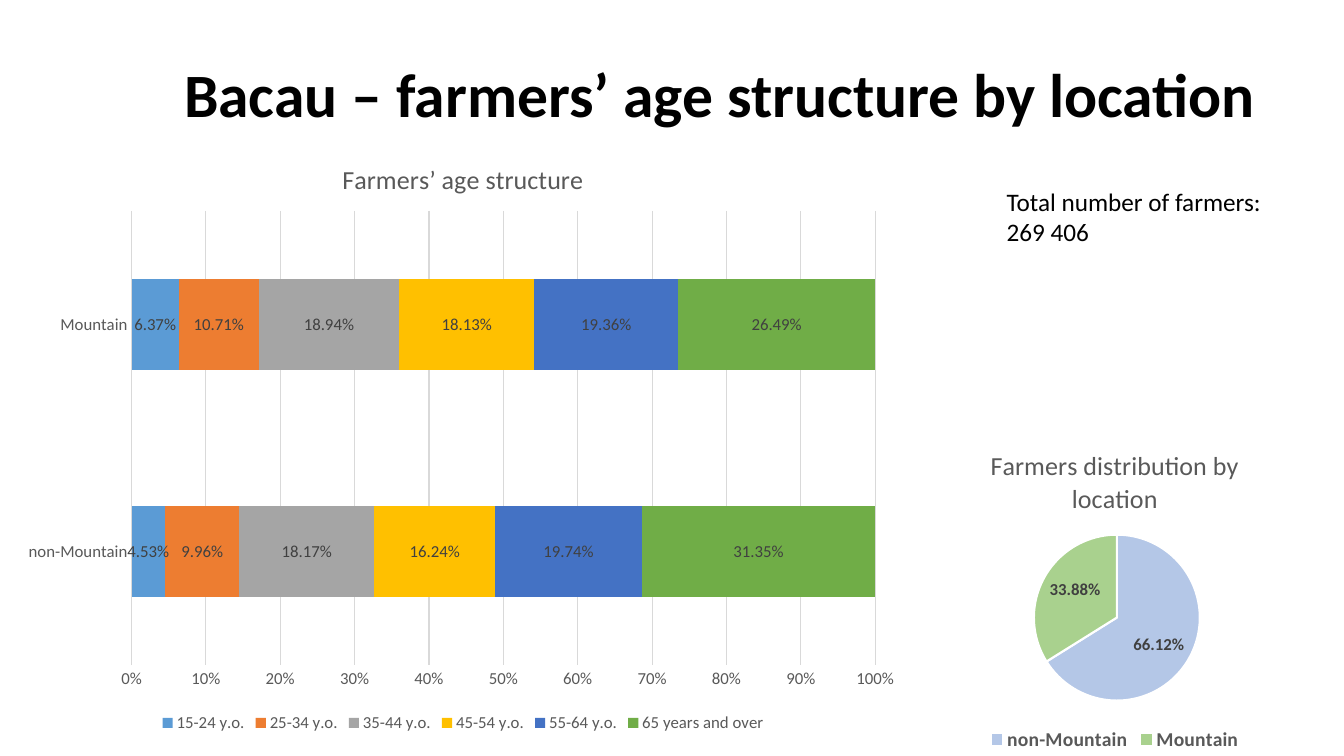
from lxml.etree import SubElement
from pptx import Presentation
from pptx.chart.data import CategoryChartData
from pptx.dml.color import RGBColor
from pptx.enum.chart import XL_CHART_TYPE, XL_LABEL_POSITION, XL_LEGEND_POSITION, XL_TICK_MARK
from pptx.enum.text import MSO_ANCHOR
from pptx.oxml.ns import qn
from pptx.util import Cm, Pt

FONT = "Calibri"
LOCATIONS = ["non-Mountain", "Mountain"]
AGE_GROUPS = [
    ("15-24 y.o.", "5B9BD5", (0.0453, 0.0637)),
    ("25-34 y.o.", "ED7D31", (0.0996, 0.1071)),
    ("35-44 y.o.", "A5A5A5", (0.1817, 0.1894)),
    ("45-54 y.o.", "FFC000", (0.1624, 0.1813)),
    ("55-64 y.o.", "4472C4", (0.1974, 0.1936)),
    ("65 years and over", "70AD47", (0.3135, 0.2649)),
]
LOCATION_SHARES = (66.12, 33.88)
LOCATION_COLORS = ("B4C7E7", "A9D18E")
GRAY = "595959"
LABEL_GRAY = "404040"
GRID_GRAY = "D9D9D9"


def color(value):
    return RGBColor.from_string(value)


def style_font(font, size, value, bold=False):
    font.name = FONT
    font.size = Pt(size)
    font.bold = bold
    font.color.rgb = color(value)


def fill_shape(item, value):
    item.format.fill.solid()
    item.format.fill.fore_color.rgb = color(value)


def style_line(line, value, width):
    line.color.rgb = color(value)
    line.width = Pt(width)


def add_text(slide, text, left, top, width, height, size,
             bold=False, anchor=MSO_ANCHOR.TOP, spacing=1.0):
    shape = slide.shapes.add_textbox(Cm(left), Cm(top), Cm(width), Cm(height))
    frame = shape.text_frame
    frame.word_wrap = True
    frame.vertical_anchor = anchor
    frame.text = text
    for paragraph in frame.paragraphs:
        paragraph.line_spacing = spacing
        style_font(paragraph.runs[0].font, size, "000000", bold)


def set_plot_layout(chart, **fractions):
    plot_area = chart.element.find(".//" + qn("c:plotArea"))
    for layout in plot_area.findall(qn("c:layout")):
        plot_area.remove(layout)
    layout = SubElement(plot_area, qn("c:layout"))
    plot_area.insert(0, layout)
    manual = SubElement(layout, qn("c:manualLayout"))
    settings = {"layoutTarget": "inner", "xMode": "edge", "yMode": "edge", **fractions}
    for name, value in settings.items():
        SubElement(manual, qn(f"c:{name}")).set("val", str(value))


def add_chart(slide, kind, series, left, top, width, height, title, legend_size, legend_bold=False):
    data = CategoryChartData()
    data.categories = LOCATIONS
    for name, values in series:
        data.add_series(name, values)
    frame = slide.shapes.add_chart(kind, Cm(left), Cm(top), Cm(width), Cm(height), data)
    chart = frame.chart
    style_font(chart.font, 10, "000000")
    chart.has_title = True
    chart.chart_title.text_frame.text = title
    run = chart.chart_title.text_frame.paragraphs[0].runs[0]
    style_font(run.font, 18.6, GRAY)
    chart.has_legend = True
    chart.legend.position = XL_LEGEND_POSITION.BOTTOM
    chart.legend.include_in_layout = False
    style_font(chart.legend.font, legend_size, GRAY, legend_bold)
    return chart


def style_labels(labels, position, bold=False):
    labels.number_format = "0.00%"
    labels.number_format_is_linked = False
    labels.position = position
    style_font(labels.font, 12, LABEL_GRAY, bold)


def style_axis(axis):
    axis.major_tick_mark = XL_TICK_MARK.NONE
    axis.minor_tick_mark = XL_TICK_MARK.NONE
    style_font(axis.tick_labels.font, 12, GRAY)


def add_age_chart(slide):
    chart = add_chart(slide, XL_CHART_TYPE.BAR_STACKED_100,
                      [(name, values) for name, _, values in AGE_GROUPS],
                      0.38, 3.51, 22.58, 15.06, "Farmers’ age structure", 12)
    set_plot_layout(chart, x=0.13, y=0.12, w=0.83, h=0.76)
    plot = chart.plots[0]
    plot.gap_width = 150
    plot.overlap = 100
    for series, (_, value, _) in zip(plot.series, AGE_GROUPS):
        fill_shape(series, value)
        series.data_labels.show_value = True
        style_labels(series.data_labels, XL_LABEL_POSITION.CENTER)
    style_axis(chart.category_axis)
    style_line(chart.category_axis.format.line, GRID_GRAY, 0.75)
    axis = chart.value_axis
    style_axis(axis)
    axis.minimum_scale = 0
    axis.maximum_scale = 1
    axis.major_unit = 0.1
    axis.format.line.fill.background()
    axis.has_major_gridlines = True
    style_line(axis.major_gridlines.format.line, GRID_GRAY, 0.75)
    axis.tick_labels.number_format = "0%"
    axis.tick_labels.number_format_is_linked = False


def add_location_chart(slide):
    chart = add_chart(slide, XL_CHART_TYPE.PIE, [("Farmers", LOCATION_SHARES)],
                      22.94, 10.85, 10.31, 8.2, "Farmers distribution by location", 14, True)
    set_plot_layout(chart, x=0.3, y=0.32, w=0.41, h=0.51)
    plot = chart.plots[0]
    plot.vary_by_categories = True
    series = plot.series[0]
    for index, value in enumerate(LOCATION_COLORS):
        point = series.points[index]
        fill_shape(point, value)
        style_line(point.format.line, "FFFFFF", 1.5)
    labels = series.data_labels
    labels.show_value = False
    labels.show_percentage = True
    style_labels(labels, XL_LABEL_POSITION.INSIDE_END, True)


def main():
    presentation = Presentation()
    presentation.slide_width = Cm(33.87)
    presentation.slide_height = Cm(19.05)
    slide = presentation.slides.add_slide(presentation.slide_layouts[6])
    add_text(slide, "Bacau – farmers’ age structure by location", 4.39, 0.69, 28.85, 3.56, 44,
             bold=True, anchor=MSO_ANCHOR.MIDDLE, spacing=0.9)
    add_location_chart(slide)
    add_age_chart(slide)
    add_text(slide, "Total number of farmers:\n269 406", 25.12, 4.57, 7.42, 1.8, 18)
    presentation.save("out.pptx")


if __name__ == "__main__":
    main()
